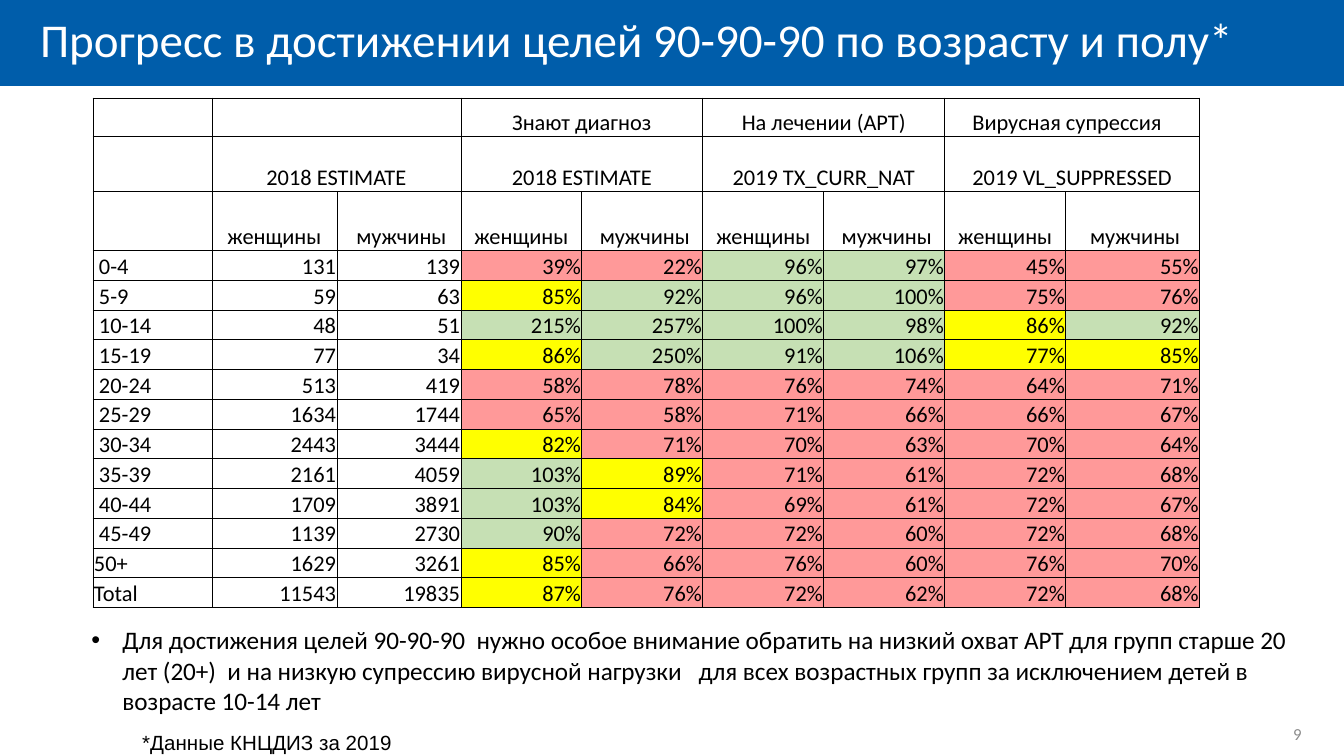
from lxml import etree
from pptx import Presentation
from pptx import util as u
from pptx.dml.color import RGBColor
from pptx.enum import text
from pptx.oxml import ns

# Content
TITLE = "Прогресс в достижении целей 90-90-90 по возрасту и полу*"
NOTE = ("Для достижения целей 90-90-90  нужно особое внимание обратить на низкий охват АРТ "
        "для групп старше 20 лет (20+)  и на низкую супрессию вирусной нагрузки   для всех "
        "возрастных групп за исключением детей в возрасте 10-14 лет")
SOURCE = "*Данные КНЦДИЗ за 2019"
PAGE = "9"
GROUPS = [
    ("", "2018 ESTIMATE"),
    ("Знают диагноз", "2018 ESTIMATE"),
    ("На лечении (АРТ)", "2019 TX_CURR_NAT"),
    ("Вирусная супрессия  ", "2019 VL_SUPPRESSED"),
]
SEXES = ["женщины", " мужчины"]
# Age, people (women, men), then per cent (women, men) for each goal
AGES = [
    (" 0-4", 131, 139, 39, 22, 96, 97, 45, 55),
    (" 5-9", 59, 63, 85, 92, 96, 100, 75, 76),
    (" 10-14", 48, 51, 215, 257, 100, 98, 86, 92),
    (" 15-19", 77, 34, 86, 250, 91, 106, 77, 85),
    (" 20-24", 513, 419, 58, 78, 76, 74, 64, 71),
    (" 25-29", 1634, 1744, 65, 58, 71, 66, 66, 67),
    (" 30-34", 2443, 3444, 82, 71, 70, 63, 70, 64),
    (" 35-39", 2161, 4059, 103, 89, 71, 61, 72, 68),
    (" 40-44", 1709, 3891, 103, 84, 69, 61, 72, 67),
    (" 45-49", 1139, 2730, 90, 72, 72, 60, 72, 68),
    ("50+", 1629, 3261, 85, 66, 76, 60, 76, 70),
    ("Total", 11543, 19835, 87, 76, 72, 62, 72, 68),
]
MARKED_YELLOW = {(" 15-19", 7)}  # set apart from the threshold rule

COLORS = {"blue": "005DAA", "white": "FFFFFF", "black": "000000", "gray": "8C8C8C",
          "red": "FF9999", "yellow": "FFFF00", "green": "C6E0B4"}
COL_W = [119, 125, 124, 121, 121, 121, 121, 121, 134]
HEAD_H = [38, 55, 59]
TABLE_X, TABLE_Y, TABLE_H = 93, 98, 509
LEFT, CENTER, RIGHT = text.PP_ALIGN.LEFT, text.PP_ALIGN.CENTER, text.PP_ALIGN.RIGHT
TOP, MIDDLE, BOTTOM = (text.MSO_ANCHOR.TOP, text.MSO_ANCHOR.MIDDLE, text.MSO_ANCHOR.BOTTOM)
SCALE = 914400 / 134.4


def px(n):
    return u.Emu(round(n * SCALE))


def rgb(name):
    return RGBColor.from_string(COLORS[name])


def write(tf, words, size=12, font="Calibri", color="black", align=LEFT, spacing=1.0):
    p = tf.paragraphs[0]
    p.alignment, p.line_spacing, p.space_before = align, spacing, u.Pt(0)
    r = p.add_run()
    r.text = words
    r.font.size, r.font.name, r.font.bold = u.Pt(size), font, False
    r.font.color.rgb = rgb(color)
    return p


def place(sp, x, y, w, h, anchor=TOP):
    sp.left, sp.top, sp.width, sp.height = px(x), px(y), px(w), px(h)
    tf = sp.text_frame
    tf.word_wrap, tf.auto_size = True, text.MSO_AUTO_SIZE.NONE
    tf.vertical_anchor = anchor
    return tf


def add_text(x, y, w, h, words, anchor=TOP, **fmt):
    write(place(s.shapes.add_textbox(0, 0, 0, 0), x, y, w, h, anchor), words, **fmt)


def set_cell(cell, words, align=LEFT, fill="white"):
    cell.margin_left = cell.margin_right = cell.margin_top = px(1)
    cell.margin_bottom = 0
    cell.vertical_anchor = BOTTOM
    write(cell.text_frame, words, align=align)
    tcPr = cell._tc.get_or_add_tcPr()
    for side in ("a:lnL", "a:lnR", "a:lnT", "a:lnB"):
        ln = etree.SubElement(tcPr, ns.qn(side), w=str(u.Pt(0.5)))
        solid = etree.SubElement(ln, ns.qn("a:solidFill"))
        etree.SubElement(solid, ns.qn("a:srgbClr"), val=COLORS["black"])
    cell.fill.solid()
    cell.fill.fore_color.rgb = rgb(fill)


def level(age, col, value):
    if (age, col) in MARKED_YELLOW:
        return "yellow"
    return "green" if value >= 90 else "yellow" if value >= 80 else "red"


prs = Presentation()
prs.slide_width, prs.slide_height = px(1344), px(756)
s = prs.slides.add_slide(prs.slide_layouts[1])

# Title band
title, body = s.shapes.title, s.placeholders[1]
title.fill.solid()
title.fill.fore_color.rgb = rgb("blue")
tf = place(title, 0, -1, 1344, 87, MIDDLE)
tf.margin_left = tf.margin_right = px(40)
write(tf, TITLE, size=25.2, color="white", spacing=0.9)

# Page number and conclusion
add_text(1199, 714, 116, 40, PAGE, anchor=MIDDLE, size=9, color="gray", align=RIGHT)
p = write(place(body, 78, 618, 1231, 105), NOTE, size=13.5)
pPr = p._p.get_or_add_pPr()
pPr.set("marL", str(px(31)))
pPr.set("indent", str(px(-31)))

# Table grid
row_h = HEAD_H + [(TABLE_H - sum(HEAD_H)) / len(AGES)] * len(AGES)
table = s.shapes.add_table(len(row_h), len(COL_W), px(TABLE_X), px(TABLE_Y),
                           px(sum(COL_W)), px(TABLE_H)).table
table.first_row = table.horz_banding = False
for col, w in zip(table.columns, COL_W):
    col.width = px(w)
for row, h in zip(table.rows, row_h):
    row.height = px(h)

# Table head: two merged rows over the row of sexes
for i in range(len(HEAD_H)):
    set_cell(table.cell(i, 0), "")
for g, names in enumerate(GROUPS):
    first = 1 + 2 * g
    for i, name in enumerate(names):
        set_cell(table.cell(i, first), name, CENTER)
        set_cell(table.cell(i, first + 1), "")
        table.cell(i, first).merge(table.cell(i, first + 1))
    for k, sex in enumerate(SEXES):
        set_cell(table.cell(2, first + k), sex, CENTER)

# Table body
for i, (age, *values) in enumerate(AGES, len(HEAD_H)):
    set_cell(table.cell(i, 0), age)
    for j, value in enumerate(values, 1):
        if j <= 2:
            set_cell(table.cell(i, j), str(value), RIGHT)
        else:
            set_cell(table.cell(i, j), f"{value}%", RIGHT, level(age, j, value))

# Source line
add_text(129, 723, 285, 39, SOURCE, size=11, font="Arial")

prs.save("out.pptx")
